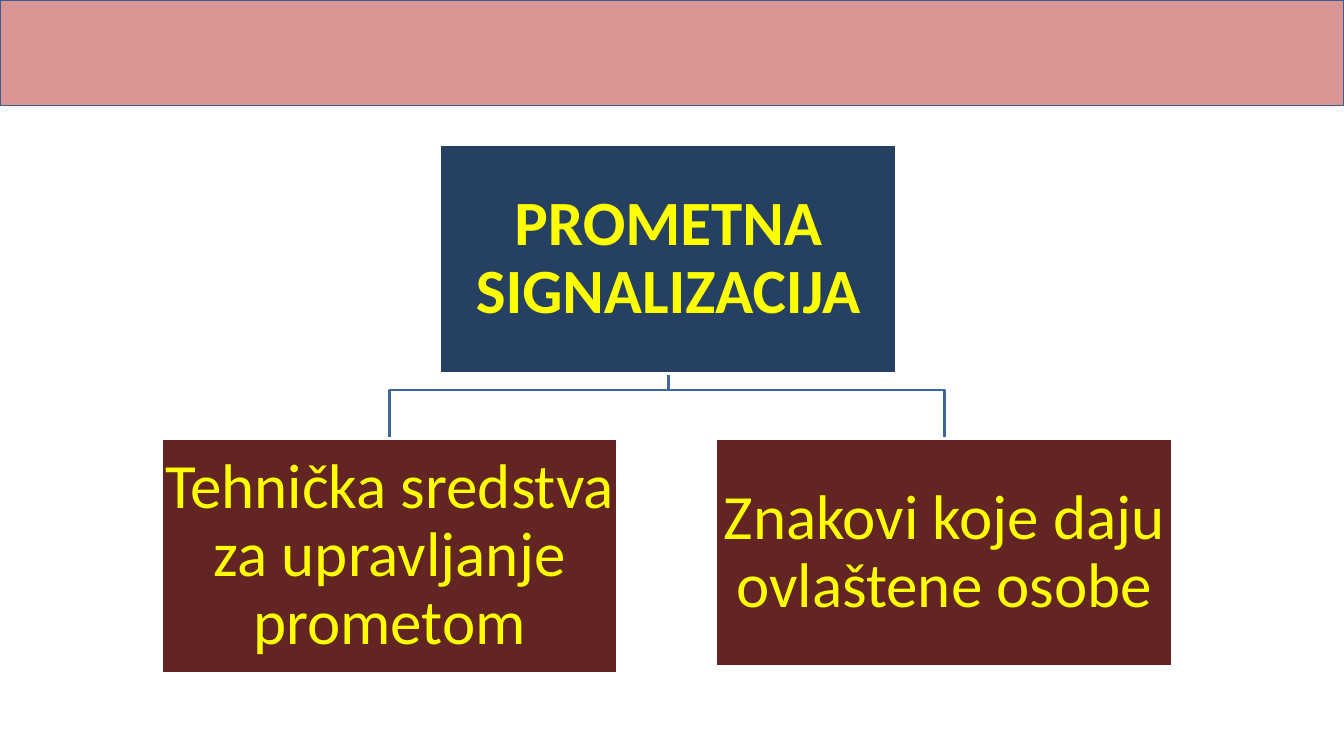
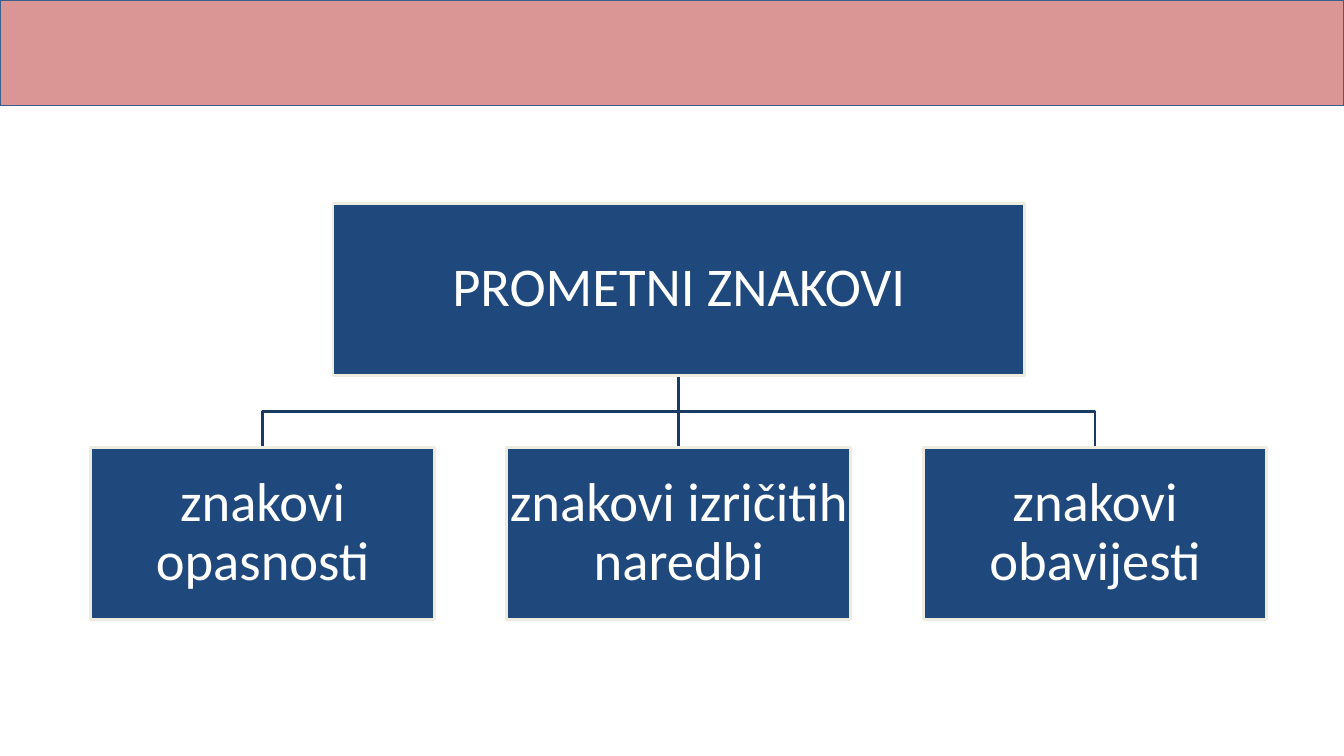
from dataclasses import dataclass

from lxml import etree
from pptx import Presentation
from pptx.dml.color import RGBColor
from pptx.enum import shapes, text
from pptx.oxml import ns
from pptx.util import Pt

SLIDE_W, SLIDE_H = 960, 540
BAND_H = 75.6
FONT = "Calibri"
LINE_W = 2
INSET = 2

WHITE = RGBColor(0xFF, 0xFF, 0xFF)
YELLOW = RGBColor(0xFF, 0xFF, 0x00)
CREAM = RGBColor(0xEE, 0xEC, 0xE1)
PINK = RGBColor(0xD9, 0x96, 0x94)
BAND_EDGE = RGBColor(0x3A, 0x5F, 0x8C)
NAVY = RGBColor(0x25, 0x40, 0x61)
MAROON = RGBColor(0x63, 0x25, 0x23)
BLUE = RGBColor(0x1F, 0x49, 0x7D)
STEEL = RGBColor(0x3F, 0x67, 0x97)
DARK_BLUE = RGBColor(0x19, 0x3A, 0x64)


@dataclass
class ChartStyle:
    root_fill: RGBColor
    child_fill: RGBColor
    edge: RGBColor
    link: RGBColor
    font_color: RGBColor
    font_size: float
    root_bold: bool = False


def set_line(sp, color, width):
    sp.line.color.rgb = color
    sp.line.width = Pt(width)


def add_rect(s, box, fill, edge, edge_w):
    sp = s.shapes.add_shape(shapes.MSO_SHAPE.RECTANGLE, *map(Pt, box))
    sp.shadow.inherit = False
    sp.fill.solid()
    sp.fill.fore_color.rgb = fill
    set_line(sp, edge, edge_w)
    return sp


def add_node(s, box, label, fill, style, bold=False):
    sp = add_rect(s, box, fill, style.edge, LINE_W)
    tf = sp.text_frame
    tf.word_wrap = True
    tf.vertical_anchor = text.MSO_ANCHOR.MIDDLE
    tf.margin_left = tf.margin_right = Pt(INSET)
    tf.margin_top = tf.margin_bottom = Pt(INSET)
    p = tf.paragraphs[0]
    p.alignment = text.PP_ALIGN.CENTER
    p.line_spacing = 0.9
    r = p.add_run()
    r.text = label
    r.font.name = FONT
    r.font.size = Pt(style.font_size)
    r.font.bold = bold
    r.font.color.rgb = style.font_color
    return sp


def add_straight(s, x, y1, y2, color):
    line = s.shapes.add_connector(
        shapes.MSO_CONNECTOR.STRAIGHT, Pt(x), Pt(y1), Pt(x), Pt(y2))
    set_line(line, color, LINE_W)
    etree.SubElement(line._element.spPr, ns.qn("a:effectLst"))
    return line


def add_elbow(s, x1, y1, x2, y2, bend_y, color):
    """Draw an open path that goes down, across at bend_y, then down."""
    path = s.shapes.build_freeform(Pt(x1), Pt(y1))
    path.add_line_segments(
        [(Pt(x), Pt(y)) for x, y in ((x1, bend_y), (x2, bend_y), (x2, y2))],
        close=False)
    sp = path.convert_to_shape()
    sp.shadow.inherit = False
    sp.fill.background()
    set_line(sp, color, LINE_W)


def add_org_chart(s, box, root, children, child_w, child_top, bend, style):
    """Place a root (label, left, width, height) over evenly spaced children.

    children holds (label, height) pairs; the root's left, child_top and
    bend are offsets from the corner of the box.
    """
    left, top, width = box
    root_label, root_left, root_w, root_h = root
    mid = left + root_left + root_w / 2
    root_bottom, child_y = top + root_h, top + child_top
    step = (width - child_w) / (len(children) - 1)
    lefts = [left + i * step for i in range(len(children))]

    # Links go first so that the node outlines lie over their ends.
    straight = {}
    for i, x in enumerate(lefts):
        centre = x + child_w / 2
        if abs(centre - mid) < 1:
            straight[i] = add_straight(s, mid, root_bottom, child_y,
                                       style.link)
        else:
            add_elbow(s, mid, root_bottom, centre, child_y, top + bend,
                      style.link)

    root_node = add_node(s, (left + root_left, top, root_w, root_h),
                         root_label, style.root_fill, style, style.root_bold)
    for i, (x, (label, height)) in enumerate(zip(lefts, children)):
        node = add_node(s, (x, child_y, child_w, height),
                        label, style.child_fill, style)
        if i in straight:
            straight[i].begin_connect(root_node, 2)
            straight[i].end_connect(node, 0)


def add_banded_slide(prs):
    s = prs.slides.add_slide(prs.slide_layouts[6])
    add_rect(s, (0, 0, SLIDE_W, BAND_H), PINK, BAND_EDGE, 0)
    return s


def main():
    prs = Presentation()
    prs.slide_width, prs.slide_height = Pt(SLIDE_W), Pt(SLIDE_H)

    add_org_chart(
        add_banded_slide(prs), (115.2, 103.4, 722.4),
        root=("PROMETNA SIGNALIZACIJA", 199, 326.2, 163.3),
        children=[("Tehnička sredstva za upravljanje prometom", 167.6),
                  ("Znakovi koje daju ovlaštene osobe", 163.3)],
        child_w=326.2, child_top=209.7, bend=175.2,
        style=ChartStyle(NAVY, MAROON, WHITE, STEEL, YELLOW, 45, True))

    add_org_chart(
        add_banded_slide(prs), (64.8, 145.2, 840.2),
        root=("PROMETNI ZNAKOVI", 173.1, 494, 122.8),
        children=[(label, 122.8) for label in (
            "znakovi opasnosti",
            "znakovi izričitih naredbi",
            "znakovi obavijesti")],
        child_w=245.6, child_top=174.5, bend=148.6,
        style=ChartStyle(BLUE, BLUE, CREAM, DARK_BLUE, WHITE, 39))

    prs.save("out.pptx")


if __name__ == "__main__":
    main()
